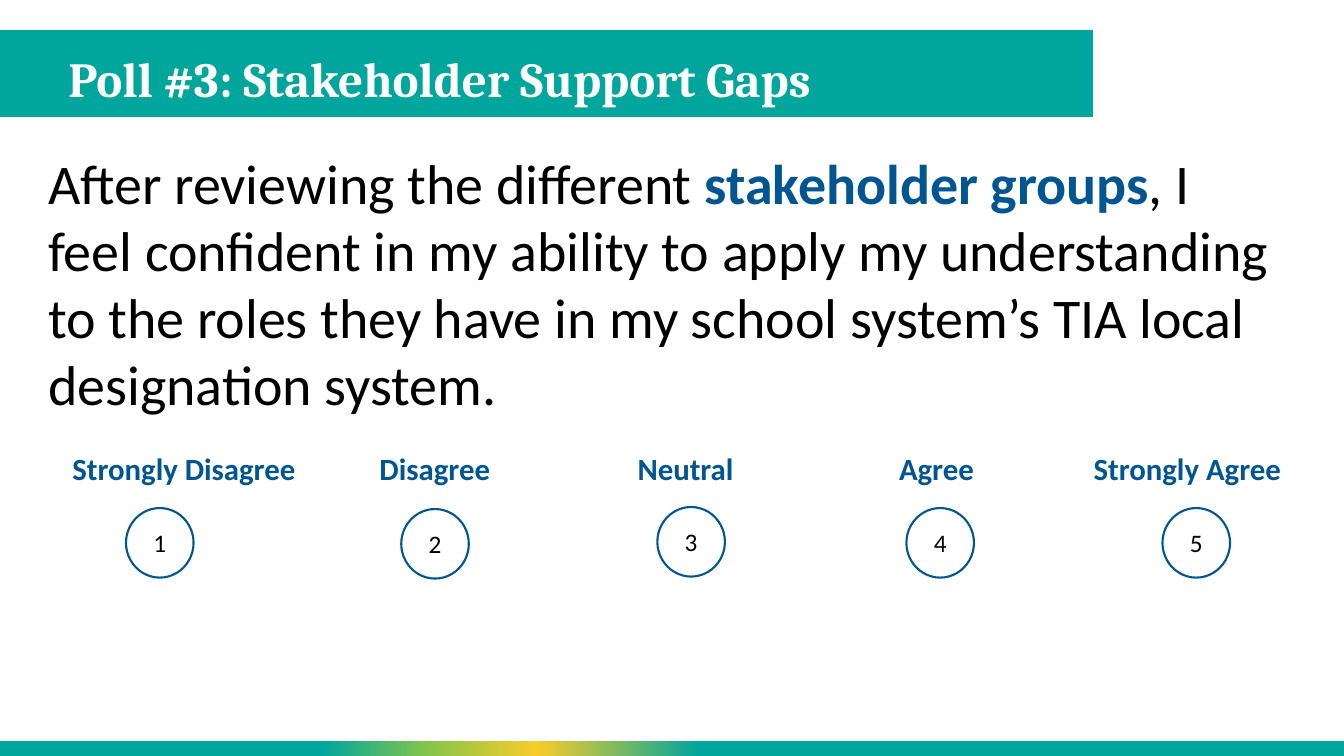
from lxml import etree
from pptx import Presentation
from pptx.dml.color import RGBColor
from pptx.enum.shapes import MSO_SHAPE
from pptx.enum.text import MSO_ANCHOR, PP_ALIGN
from pptx.oxml import parse_xml
from pptx.oxml.ns import qn
from pptx.util import Inches, Pt

RECTANGLE, OVAL = MSO_SHAPE.RECTANGLE, MSO_SHAPE.OVAL
MIDDLE, CENTER = MSO_ANCHOR.MIDDLE, PP_ALIGN.CENTER
TEAL, BLUE, WHITE, BLACK = "00A69B", "015692", "FFFFFF", "000000"
DRAWING = "http://schemas.openxmlformats.org/drawingml/2006/main"


def color(value):
    return RGBColor.from_string(value)


def add_span(para, text, size, fill, bold=False, face="Calibri"):
    span = para.add_run()
    span.text = text
    span.font.name = face
    span.font.size = Pt(size)
    span.font.bold = bold
    span.font.color.rgb = color(fill)


deck = Presentation()
deck.slide_width, deck.slide_height = Inches(13.33), Inches(7.5)
page = deck.slides.add_slide(deck.slide_layouts[6])

# Title band and footer strip
bands = []
for top, width, height in [(0.3, 10.85, 0.86), (7.35, 13.34, 0.15)]:
    band = page.shapes.add_shape(
        RECTANGLE, Inches(-0.01), Inches(top), Inches(width), Inches(height))
    band.shadow.inherit = False
    band.fill.solid()
    band.fill.fore_color.rgb = color(TEAL)
    band.line.fill.background()
    bands.append(band)

footer = bands[1]
footer.fill.gradient()
footer.fill.gradient_angle = 180
stops = footer._element.spPr.find(qn("a:gradFill")).find(qn("a:gsLst"))
for stop in list(stops):
    stops.remove(stop)
for percent, shade in [(0, TEAL), (48, TEAL), (60, "F8CC2B"),
                       (68, "87C54A"), (76, TEAL), (100, TEAL)]:
    stop = etree.SubElement(stops, qn("a:gs"), pos=str(percent * 1000))
    etree.SubElement(stop, qn("a:srgbClr"), val=shade)

# Title
title = page.shapes.add_textbox(Inches(0.58), Inches(0.38), Inches(10.58), Inches(0.86))
title.text_frame.word_wrap = True
title.text_frame.vertical_anchor = MIDDLE
para = title.text_frame.paragraphs[0]
para.line_spacing = 0.9
add_span(para, "Poll #3: Stakeholder Support Gaps", 35, WHITE, True, "Cambria")

# Poll statement
statement = page.shapes.add_textbox(Inches(0.38), Inches(1.42), Inches(12.33), Inches(3.75))
statement.text_frame.word_wrap = True
para = statement.text_frame.paragraphs[0]
add_span(para, "After reviewing the different ", 40, BLACK)
add_span(para, "stakeholder groups", 40, BLUE, True)
add_span(para, ", I feel confident in my ability to apply my understanding to the roles "
         "they have in my school system’s TIA local designation system.", 40, BLACK)

# Answer labels
labels = ["Strongly Disagree", "Disagree", "Neutral", "Agree", "Strongly Agree"]
scale = page.shapes.add_table(
    1, len(labels), Inches(0.58), Inches(4.38), Inches(12.44), Inches(0.57)).table
scale.first_row = scale.horz_banding = False
for cell, label in zip(scale.rows[0].cells, labels):
    cell.margin_left = cell.margin_right = Inches(0.1)
    cell.margin_top = cell.margin_bottom = Inches(0.1)
    properties = cell._tc.get_or_add_tcPr()
    for side in ("lnL", "lnR", "lnT", "lnB"):
        properties.append(parse_xml(
            f'<a:{side} xmlns:a="{DRAWING}" w="{Pt(0.75)}"><a:solidFill>'
            f'<a:srgbClr val="{WHITE}"/></a:solidFill></a:{side}>'))
    cell.fill.background()
    para = cell.text_frame.paragraphs[0]
    para.alignment = CENTER
    add_span(para, label, 22, BLUE, True)

# Numbered answer circles
circle_places = [(1.25, 5.04), (3.98, 5.05), (6.52, 5.03), (8.99, 5.04), (11.53, 5.04)]
for number, (left, top) in enumerate(circle_places, start=1):
    circle = page.shapes.add_shape(
        OVAL, Inches(left), Inches(top), Inches(0.67), Inches(0.69))
    circle.shadow.inherit = False
    circle.fill.solid()
    circle.fill.fore_color.rgb = color(WHITE)
    circle.line.color.rgb = color(BLUE)
    circle.line.width = Pt(1.5)
    frame = circle.text_frame
    frame.margin_left = frame.margin_right = Inches(0.1)
    frame.margin_top = frame.margin_bottom = Inches(0.1)
    frame.vertical_anchor = MIDDLE
    para = frame.paragraphs[0]
    para.alignment = CENTER
    add_span(para, str(number), 18, BLACK)

deck.save("out.pptx")
